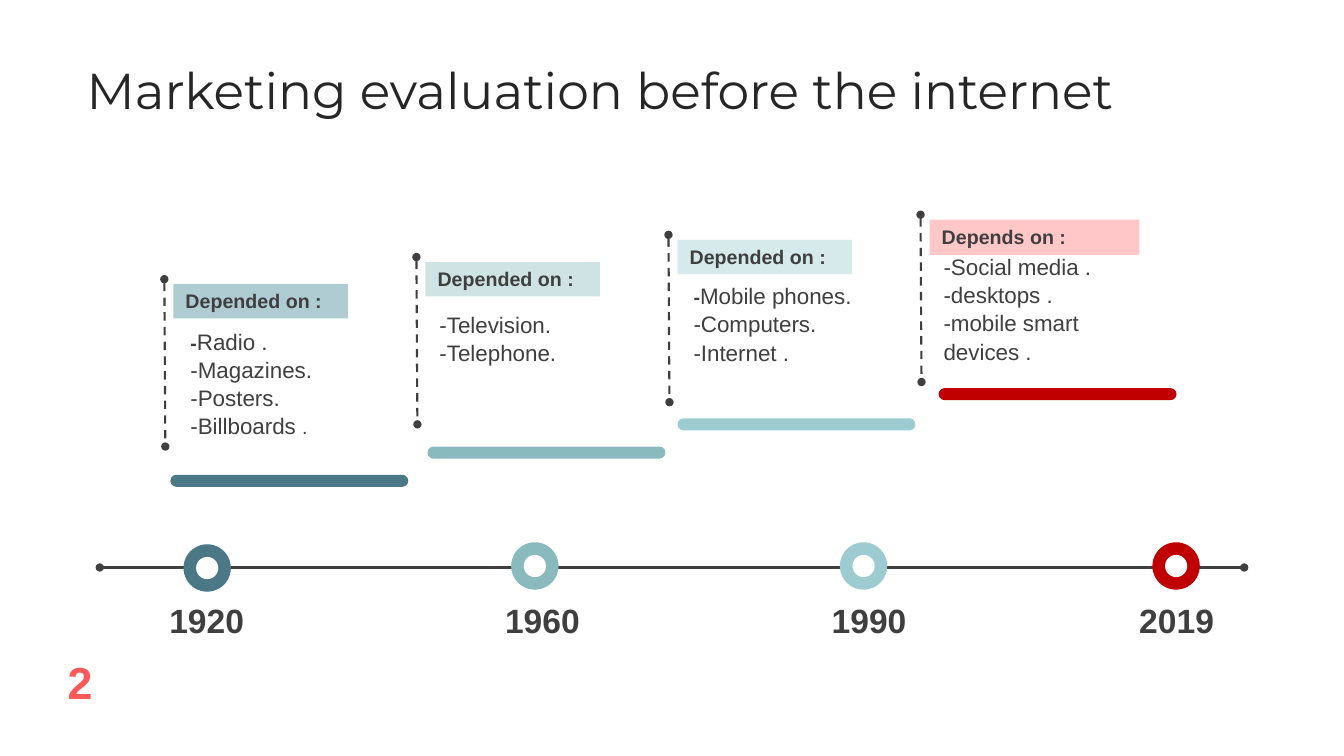
from dataclasses import dataclass

from lxml import etree
from pptx import Presentation, util as u
from pptx.dml.color import RGBColor
from pptx.enum import dml, shapes, text
from pptx.oxml.ns import qn

TITLE = "Marketing evaluation before the internet"
PAGE = "2"
DASH = ("-", 14, True)

# Each paragraph is a list of runs: plain text, or (text, size, bold).
# Positions are (left, top) and boxes (left, top, width, height), in px.
ERAS = [
    dict(year="1920", color="4A7886", tint="B0CCD3", head="Depended on :",
         items=[[DASH, "Radio ."], ["-Magazines."], ["-Posters."],
                ["-Billboards ", (".", 14, False)]],
         stem=277, tag=(173, 34), body=(179, 319, 172, 118),
         bar=(169, 471), ring=(182, 540), label=145),
    dict(year="1960", color="88BABE", tint="CFE3E4", head="Depended on :",
         items=[["-Television."], ["-Telephone."]],
         stem=255, tag=(173, 34), body=(426, 302, 172, 104),
         bar=(424, 443), ring=(507, 538), label=478),
    dict(year="1990", color="9CCCD2", tint="D6EAEC", head="Depended on :",
         items=[[DASH, "Mobile phones."], ["-Computers."], ["-Internet ."]],
         stem=233, tag=(173, 34), body=(678, 274, 192, 94),
         bar=(672, 415), ring=(833, 538), label=802),
    dict(year="2019", color="C00000", tint="FFC7C7", head="Depends on :",
         items=[["-Social media ."], ["-desktops ."],
                ["-mobile smart devices ."]],
         stem=213, tag=(208, 35), body=(926, 245, 229, 118),
         bar=(931, 385), ring=(1143, 538), label=1107),
]


@dataclass(frozen=True)
class Theme:
    ink: str = "3F3F3F"
    title: str = "262626"
    page: str = "FE5959"
    white: str = "FFFFFF"
    font: str = "Arial"
    face: str = "Montserrat"
    big: int = 36
    num: int = 32
    year: int = 24
    item: int = 16
    head: int = 14


T = Theme()
PX = 9144  # EMU in one px, 100 px to the inch
STEM_X, STEP, STEM_H = 163, 250, 166
RING, HOLE = 47, 22


def px(*vals):
    return [u.Emu(round(v * PX)) for v in vals]


def write(shape, paras, size=T.item, color=T.ink, font=T.font, bold=False,
          align=text.PP_ALIGN.LEFT, anchor=text.MSO_ANCHOR.TOP,
          pad=(10, 5), space=None):
    frame = shape.text_frame
    frame.word_wrap = True
    frame.auto_size = text.MSO_AUTO_SIZE.NONE
    frame.vertical_anchor = anchor
    frame.margin_left, frame.margin_top = px(*pad)
    frame.margin_right, frame.margin_bottom = px(*pad)
    for i, runs in enumerate(paras):
        para = frame.add_paragraph() if i else frame.paragraphs[0]
        para.alignment = align
        para.line_spacing = space
        for part in runs:
            words, pts, heavy = (
                (part, size, bold) if isinstance(part, str) else part)
            run = para.add_run()
            run.text = words
            run.font.name, run.font.size = font, u.Pt(pts)
            run.font.bold = heavy
            run.font.color.rgb = RGBColor.from_string(color)


def box(slide, area, paras, **style):
    write(slide.shapes.add_textbox(*px(*area)), paras, **style)


def shape(slide, kind, area, color):
    item = slide.shapes.add_shape(kind, *px(*area))
    item.shadow.inherit = False
    item.fill.solid()
    item.fill.fore_color.rgb = RGBColor.from_string(color)
    item.line.fill.background()
    return item


def line(slide, ends, width, dash=None):
    """Draw a straight line with a dot at each end."""
    item = slide.shapes.add_connector(
        shapes.MSO_CONNECTOR.STRAIGHT, *px(*ends))
    item.line.color.rgb = RGBColor.from_string(T.ink)
    item.line.width = u.Pt(width)
    if dash:
        item.line.dash_style = dash
    props = item.line._get_or_add_ln()
    for tag in ("a:headEnd", "a:tailEnd"):
        etree.SubElement(props, qn(tag), type="oval")
    etree.SubElement(item._element.spPr, qn("a:effectLst"))


def milestone(slide, era):
    kind = shapes.MSO_SHAPE.OVAL
    left, top = era["ring"]
    gap = (RING - HOLE) / 2
    shape(slide, kind, (left, top, RING, RING), era["color"])
    shape(slide, kind, (left + gap, top + gap, HOLE, HOLE), T.white)
    box(slide, (era["label"], 595, 120, 40), [[era["year"]]], size=T.year,
        bold=True, align=text.PP_ALIGN.CENTER, pad=(0, 0))


def column(slide, i, era):
    left, top = STEM_X + STEP * i, era["stem"]
    box(slide, era["body"], era["items"], space=1.05)
    tag = shape(slide, shapes.MSO_SHAPE.RECTANGLE,
                (left + 9, top + 5, *era["tag"]), era["tint"])
    write(tag, [[era["head"]]], size=T.head, bold=True, pad=(12, 5))
    line(slide, (left, top, left + 1, top + STEM_H), 1.5,
         dml.MSO_LINE.DASH)
    bar = shape(slide, shapes.MSO_SHAPE.ROUNDED_RECTANGLE,
                (*era["bar"], 236, 12), era["color"])
    bar.adjustments[0] = 0.5


def main():
    deck = Presentation()
    deck.slide_width, deck.slide_height = px(1333, 750)
    slide = deck.slides.add_slide(deck.slide_layouts[5])
    title = slide.shapes.title
    title.left, title.top, title.width, title.height = px(76, 62, 1203, 61)
    write(title, [[TITLE]], size=T.big, color=T.title, font=T.face,
          anchor=text.MSO_ANCHOR.MIDDLE, space=0.9)
    line(slide, (99, 563, 1234, 563), 1.75)
    for i, era in enumerate(ERAS):
        milestone(slide, era)
        column(slide, i, era)
    box(slide, (31, 645, 97, 64), [[PAGE]], size=T.num, color=T.page,
        bold=True, align=text.PP_ALIGN.CENTER, pad=(12, 5))
    deck.save("out.pptx")


if __name__ == "__main__":
    main()
